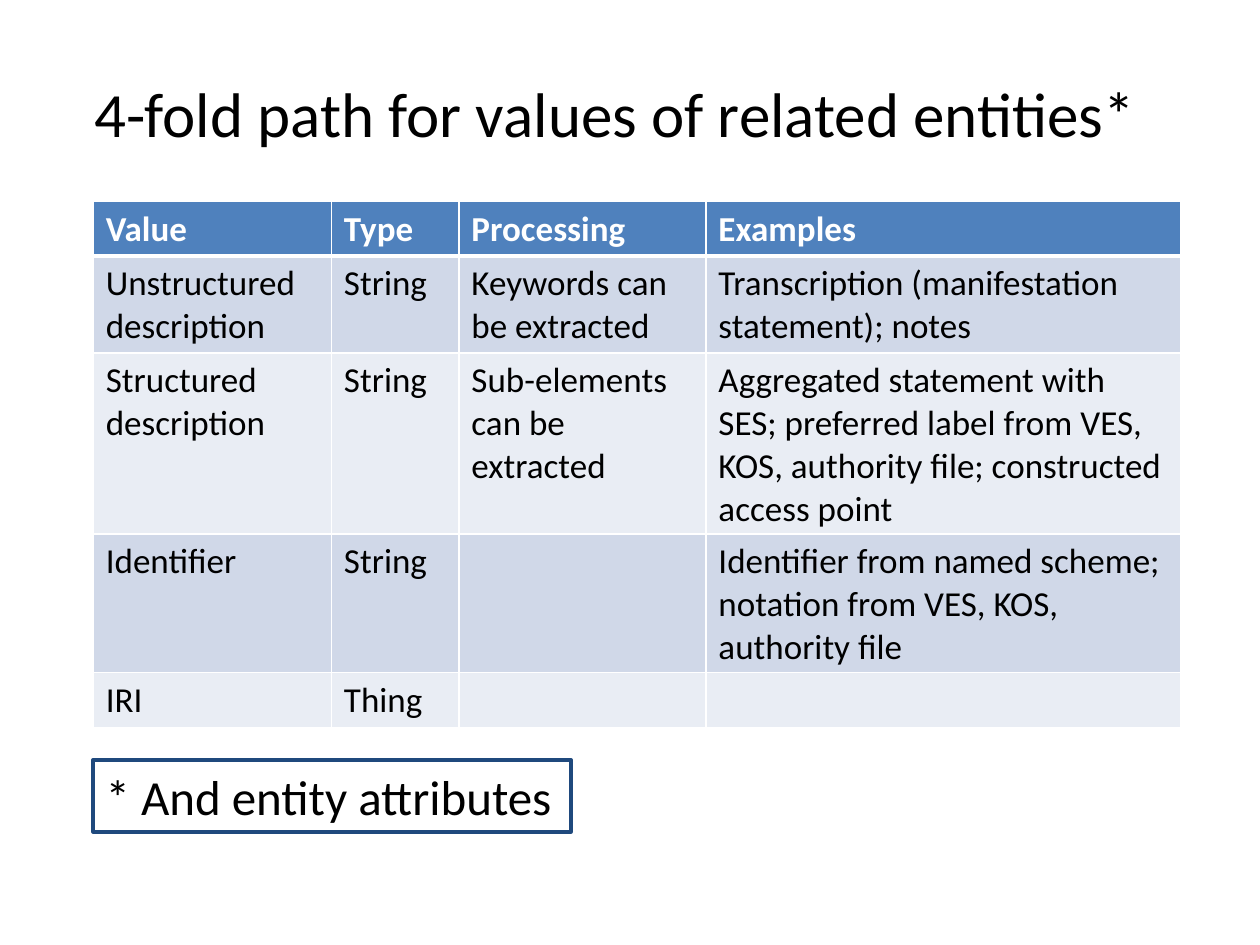
"""Builds the slide on the four-fold path for values of related entities."""
from dataclasses import dataclass

from lxml.etree import SubElement
from pptx import Presentation
from pptx.dml.color import RGBColor as RGB
from pptx.enum.shapes import MSO_SHAPE as SHAPE
from pptx.enum.text import MSO_ANCHOR as ANCHOR, MSO_AUTO_SIZE as AUTO, PP_ALIGN as ALIGN
from pptx.oxml.ns import qn
from pptx.util import Cm, Pt


@dataclass(frozen=True)
class Theme:
    font: str = "Calibri"
    text: str = "000000"
    light: str = "FFFFFF"
    header: str = "4F81BD"
    bands: tuple = ("D0D8E8", "E9EDF4")
    outline: str = "1F497D"
    title_size: float = 36
    note_size: float = 28
    table_size: float = 20
    outline_width: float = 2.25
    border: float = 1
    header_border: float = 3


class SlideBuilder:
    def __init__(self, slide, theme):
        self.s = slide
        self.theme = theme

    def set_text(self, tf, text, size, color, bold=False):
        p = tf.paragraphs[0]
        p.text = text
        p.alignment = ALIGN.LEFT
        p.font.name = self.theme.font
        p.font.size = Pt(size)
        p.font.bold = bold
        p.font.color.rgb = RGB.from_string(color)

    def fit(self, tf):
        tf.word_wrap = False
        tf.auto_size = AUTO.SHAPE_TO_FIT_TEXT
        tf.vertical_anchor = ANCHOR.TOP

    def title(self, text, x, y, w, h):
        sp = self.s.shapes.add_textbox(Cm(x), Cm(y), Cm(w), Cm(h))
        self.fit(sp.text_frame)
        self.set_text(sp.text_frame, text, self.theme.title_size, self.theme.text)

    def note(self, text, x, y, w, h):
        sp = self.s.shapes.add_shape(SHAPE.RECTANGLE, Cm(x), Cm(y), Cm(w), Cm(h))
        sp.shadow.inherit = False
        sp.fill.background()
        sp.line.color.rgb = RGB.from_string(self.theme.outline)
        sp.line.width = Pt(self.theme.outline_width)
        self.fit(sp.text_frame)
        self.set_text(sp.text_frame, text, self.theme.note_size, self.theme.text)

    def borders(self, cell, top, bottom):
        tc_pr = cell._tc.get_or_add_tcPr()
        thin = self.theme.border
        for side, width in zip("LRTB", (thin, thin, top, bottom)):
            ln = SubElement(tc_pr, qn(f"a:ln{side}"), w=str(Pt(width)))
            fill = SubElement(ln, qn("a:solidFill"))
            SubElement(fill, qn("a:srgbClr"), val=self.theme.light)

    def table(self, rows, x, y, widths, heights):
        t = self.theme
        tbl = self.s.shapes.add_table(
            len(rows), len(widths), Cm(x), Cm(y), Cm(sum(widths)), Cm(sum(heights))
        ).table
        for col, width in zip(tbl.columns, widths):
            col.width = Cm(width)
        for i, (row, height) in enumerate(zip(rows, heights)):
            tbl.rows[i].height = Cm(height)
            head = i == 0
            fill = t.header if head else t.bands[(i - 1) % 2]
            top = t.header_border if i == 1 else t.border
            bottom = t.header_border if head else t.border
            for cell, text in zip(tbl.rows[i].cells, row):
                self.borders(cell, top, bottom)
                cell.fill.solid()
                cell.fill.fore_color.rgb = RGB.from_string(fill)
                color = t.light if head else t.text
                self.set_text(cell.text_frame, text, t.table_size, color, head)


ROWS = (
    ("Value", "Type", "Processing", "Examples"),
    ("Unstructured description", "String", "Keywords can be extracted",
     "Transcription (manifestation statement); notes"),
    ("Structured description", "String", "Sub-elements can be extracted",
     "Aggregated statement with SES; preferred label from VES, KOS, "
     "authority file; constructed access point"),
    ("Identifier", "String", "",
     "Identifier from named scheme; notation from VES, KOS, authority file"),
    ("IRI", "Thing", "", ""),
)


def main():
    prs = Presentation()
    prs.slide_width, prs.slide_height = Cm(25.4), Cm(19.05)
    slide = SlideBuilder(prs.slides.add_slide(prs.slide_layouts[6]), Theme())
    slide.title("4-fold path for values of related entities*", 1.65, 1.37, 21.72, 1.8)
    slide.table(ROWS, 1.88, 4.06, (4.8, 2.57, 4.98, 9.58), (1.1, 1.95, 3.65, 2.8, 1.1))
    slide.note("* And entity attributes", 1.88, 15.32, 9.63, 1.45)
    prs.save("out.pptx")


if __name__ == "__main__":
    main()
